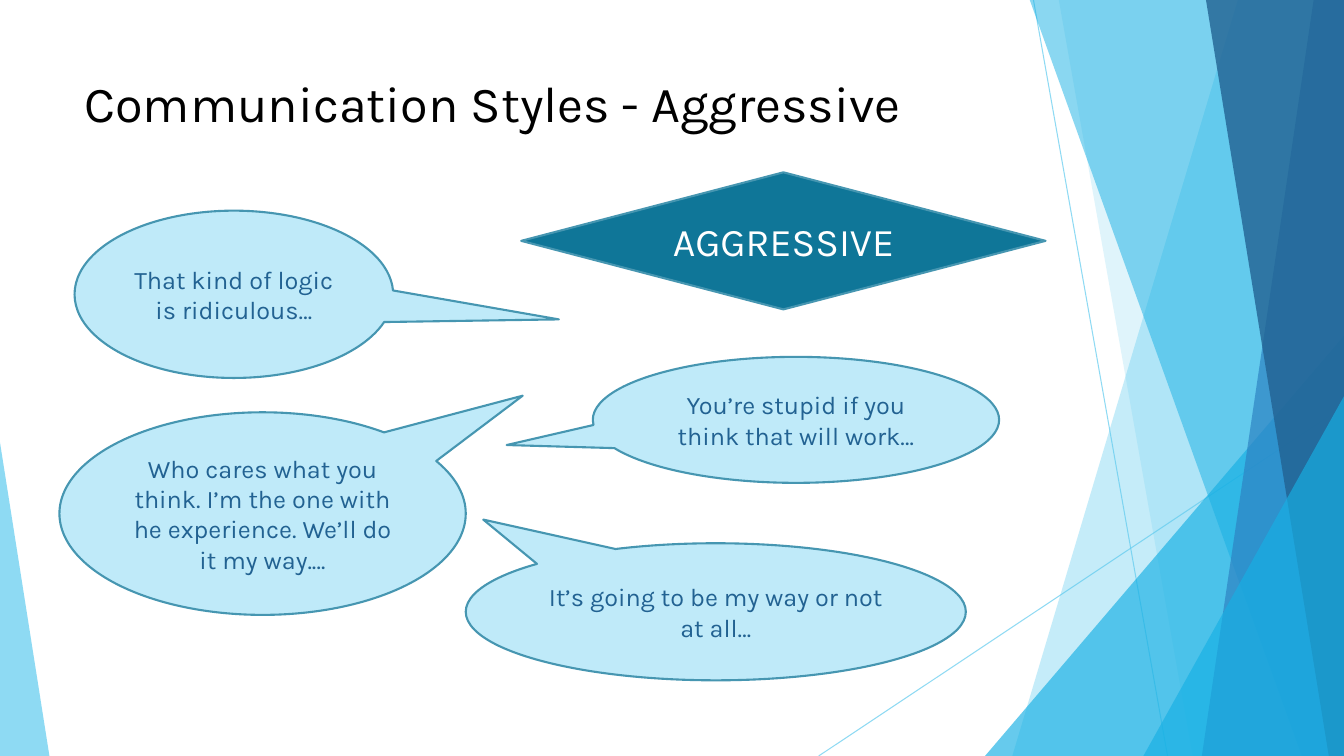
from lxml.etree import SubElement
from pptx import Presentation
from pptx.dml.color import RGBColor
from pptx.enum.shapes import MSO_CONNECTOR, MSO_SHAPE
from pptx.enum.text import MSO_ANCHOR, PP_ALIGN
from pptx.oxml.ns import qn
from pptx.util import Inches, Pt

FONT = "Karla"
BLACK = RGBColor(0x00, 0x00, 0x00)
WHITE = RGBColor(0xFF, 0xFF, 0xFF)
SKY = RGBColor(0x5F, 0xCB, 0xEF)
CYAN = RGBColor(0x17, 0xB0, 0xE4)
BLUE = RGBColor(0x2E, 0x83, 0xC3)
NAVY = RGBColor(0x22, 0x62, 0x92)
TEAL = RGBColor(0x0F, 0x76, 0x98)
PALE = RGBColor(0xBF, 0xEA, 0xF9)
OUTLINE = RGBColor(0x46, 0x96, 0xB1)

WIDTH, HEIGHT, TOP = 13.33, 7.5, -0.01

# Content
TITLE = "Communication Styles - Aggressive"
STYLE = "AGGRESSIVE"
# text, (left, top, width, height), pointer offset from the centre
CALLOUTS = [
    ("That kind of logic is ridiculous…", (0.74, 2.09, 3.16, 1.66), (1.02, 0.15)),
    ("It’s going to be my way or not at all…", (4.62, 5.39, 4.96, 1.36), (-0.465, -0.673)),
    ("You’re stupid if you think that will work…", (5.88, 3.54, 4.03, 1.25), (-0.712, 0.2)),
    ("Who cares what you think. I’m the one with he experience. We’ll do it my way.…",
     (0.59, 4.09, 4.03, 2.01), (0.64, -0.582)),
]

# Backdrop, back to front
RAYS = [((10.25, 0), (11.58, HEIGHT)), ((WIDTH, 4.03), (8.12, HEIGHT))]
# band: x at the top, x at the bottom, colour, opacity; runs to the right edge
# triangle: left, top, width, apex position, colour, opacity; runs to the bottom edge
BACKDROP = [
    ("band", 12.28, 10.04, SKY, 36),
    ("band", 10.5, 11.83, SKY, 20),
    ("triangle", 9.77, 3.33, 3.56, 1, CYAN, 66),
    ("band", 10.21, 12.91, CYAN, 50),
    ("band", 13.03, 11.92, BLUE, 70),
    ("band", 11.96, 13.18, NAVY, 80),
    ("triangle", 11.34, 3.93, 1.99, 1, CYAN, 66),
    ("triangle", 0, 4.39, 0.49, 0, SKY, 70),
]

prs = Presentation()
prs.slide_width, prs.slide_height = Inches(WIDTH), Inches(HEIGHT)
slide = prs.slides.add_slide(prs.slide_layouts[6])
shapes = slide.shapes


def set_opacity(sp, percent):
    for color in sp._element.spPr.iter(qn("a:srgbClr")):
        SubElement(color, qn("a:alpha")).set("val", str(percent * 1000))


def paint(sp, fill, line=None):
    sp.shadow.inherit = False
    sp.fill.solid()
    sp.fill.fore_color.rgb = fill
    if line is None:
        sp.line.fill.background()
    else:
        sp.line.color.rgb = line
        sp.line.width = Pt(1.5)


def add_text(sp, text, *, size, color, align=PP_ALIGN.CENTER, anchor=MSO_ANCHOR.MIDDLE):
    tf = sp.text_frame
    tf.word_wrap = True
    tf.vertical_anchor = anchor
    p = tf.paragraphs[0]
    p.alignment = align
    r = p.add_run()
    r.text = text
    r.font.name, r.font.size, r.font.color.rgb = FONT, Pt(size), color


def add_preset(kind, box, adjustments=()):
    sp = shapes.add_shape(kind, *map(Inches, box))
    for i, value in enumerate(adjustments):
        sp.adjustments[i] = value
    return sp


def add_band(top_x, bottom_x):
    corners = [(top_x, TOP), (WIDTH, TOP), (WIDTH, HEIGHT), (bottom_x, HEIGHT)]
    points = [(Inches(x), Inches(y)) for x, y in corners]
    builder = shapes.build_freeform(*points[0])
    builder.add_line_segments(points[1:], close=True)
    return builder.convert_to_shape()


# Thin rays
for start, end in RAYS:
    ray = shapes.add_connector(MSO_CONNECTOR.STRAIGHT, *map(Inches, start + end))
    ray.line.color.rgb = SKY
    ray.line.width = Pt(0.75)
    set_opacity(ray, 70)
    SubElement(ray._element.spPr, qn("a:effectLst"))

# Translucent bands and triangles
for kind, *geometry, color, opacity in BACKDROP:
    if kind == "band":
        sp = add_band(*geometry)
    else:
        left, top, width, apex = geometry
        sp = add_preset(MSO_SHAPE.ISOSCELES_TRIANGLE, (left, top, width, HEIGHT - top), [apex])
    paint(sp, color)
    set_opacity(sp, opacity)

# Title
title = shapes.add_textbox(*map(Inches, (0.74, 0.67, 9.4, 1.44)))
add_text(title, TITLE, size=36, color=BLACK, align=PP_ALIGN.LEFT, anchor=MSO_ANCHOR.TOP)

# Speech callouts
for text, box, pointer in CALLOUTS:
    callout = add_preset(MSO_SHAPE.OVAL_CALLOUT, box, pointer)
    paint(callout, PALE, OUTLINE)
    add_text(callout, text, size=18, color=NAVY)

# Style name
diamond = add_preset(MSO_SHAPE.FLOWCHART_DECISION, (5.17, 1.71, 5.2, 1.36))
paint(diamond, TEAL, OUTLINE)
add_text(diamond, STYLE, size=28, color=WHITE)

prs.save("out.pptx")
